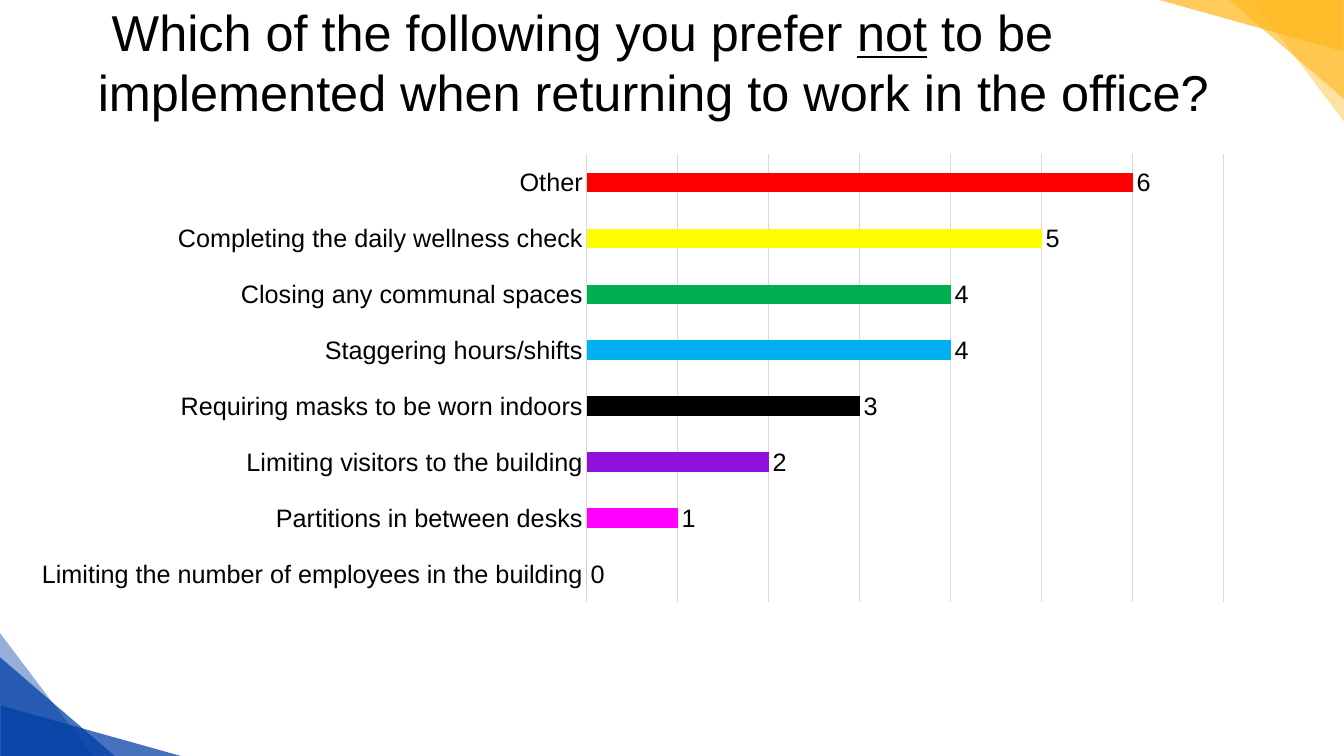
from lxml.etree import SubElement
from pptx import Presentation
from pptx.chart.data import CategoryChartData
from pptx.dml.color import RGBColor
from pptx.enum.chart import XL_CHART_TYPE, XL_LABEL_POSITION, XL_TICK_LABEL_POSITION, XL_TICK_MARK
from pptx.enum.shapes import MSO_SHAPE
from pptx.enum.text import MSO_AUTO_SIZE
from pptx.oxml import parse_xml
from pptx.oxml.ns import nsdecls, qn
from pptx.util import Inches, Pt

BLACK = RGBColor(0x00, 0x00, 0x00)
BLUE = RGBColor(0x00, 0x3D, 0xA5)
GOLD = RGBColor(0xFF, 0xB8, 0x1D)
GRID_GRAY = RGBColor(0xD9, 0xD9, 0xD9)
SERIES_BLUE = RGBColor(0x44, 0x72, 0xC4)
MAGENTA = RGBColor(0xFF, 0x00, 0xFF)
PURPLE = RGBColor(0x90, 0x13, 0xDD)
SKY = RGBColor(0x00, 0xB0, 0xF0)
GREEN = RGBColor(0x00, 0xB0, 0x50)
YELLOW = RGBColor(0xFF, 0xFF, 0x00)
RED = RGBColor(0xFF, 0x00, 0x00)

FONT = "Arial"

CORNER_TRIANGLES = [
    (0, 6.28, 0.92, 1.22, 0, BLUE, 41),
    (0, 6.52, 1.15, 0.99, 0, BLUE, 73),
    (12.42, 0, 0.92, 1.22, 180, GOLD, 41),
    (12.19, 0, 1.15, 0.99, 180, GOLD, 61),
    (0.01, 7, 1.82, 0.51, 0, BLUE, 73),
    (11.5, 0, 1.82, 0.51, 180, GOLD, 73),
]

TITLE_RUNS = [
    (" Which of the following you prefer ", False),
    ("not", True),
    (" to be implemented when returning to work in the office?", False),
]

ANSWERS = [
    ("Limiting the number of employees in the building", 0, SERIES_BLUE),
    ("Partitions in between desks", 1, MAGENTA),
    ("Limiting visitors to the building", 2, PURPLE),
    ("Requiring masks to be worn indoors", 3, BLACK),
    ("Staggering hours/shifts", 4, SKY),
    ("Closing any communal spaces", 4, GREEN),
    ("Completing the daily wellness check", 5, YELLOW),
    ("Other", 6, RED),
]


def style_font(font, size):
    font.name = FONT
    font.size = Pt(size)
    font.color.rgb = BLACK


def style_line(line):
    line.color.rgb = GRID_GRAY
    line.width = Pt(0.75)


def add_corner_triangle(slide, left, top, width, height, rotation, color, opacity):
    triangle = slide.shapes.add_shape(
        MSO_SHAPE.RIGHT_TRIANGLE, Inches(left), Inches(top), Inches(width), Inches(height)
    )
    triangle.rotation = rotation
    triangle.shadow.inherit = False
    triangle.line.fill.background()
    triangle.fill.solid()
    triangle.fill.fore_color.rgb = color
    color_element = triangle.fill._xPr.find(qn("a:solidFill"))[0]
    SubElement(color_element, qn("a:alpha")).set("val", str(opacity * 1000))


def add_title(slide):
    box = slide.shapes.add_textbox(Inches(0.97), Inches(0.01), Inches(11.93), Inches(1.21))
    frame = box.text_frame
    frame.word_wrap = True
    frame.auto_size = MSO_AUTO_SIZE.SHAPE_TO_FIT_TEXT
    frame.margin_left = frame.margin_right = frame.margin_top = frame.margin_bottom = 0
    paragraph = frame.paragraphs[0]
    style_font(paragraph.font, 36)
    for text, underlined in TITLE_RUNS:
        run = paragraph.add_run()
        run.text = text
        if underlined:
            run.font.underline = True


def set_plot_layout(chart, left, top, width, height):
    plot_area = chart._chartSpace.chart.plotArea
    for layout in plot_area.findall(qn("c:layout")):
        plot_area.remove(layout)
    plot_area.insert(0, parse_xml(
        f'<c:layout {nsdecls("c")}><c:manualLayout><c:layoutTarget val="inner"/>'
        '<c:xMode val="edge"/><c:yMode val="edge"/>'
        f'<c:x val="{left}"/><c:y val="{top}"/><c:w val="{width}"/><c:h val="{height}"/>'
        '</c:manualLayout></c:layout>'
    ))


def style_axes(chart):
    category_axis = chart.category_axis
    category_axis.major_tick_mark = XL_TICK_MARK.NONE
    category_axis.minor_tick_mark = XL_TICK_MARK.NONE
    category_axis.tick_label_position = XL_TICK_LABEL_POSITION.NEXT_TO_AXIS
    style_font(category_axis.tick_labels.font, 18)
    style_line(category_axis.format.line)
    value_axis = chart.value_axis
    value_axis.minimum_scale = 0
    value_axis.maximum_scale = 7
    value_axis.major_unit = 1
    value_axis.has_major_gridlines = True
    style_line(value_axis.major_gridlines.format.line)
    value_axis.visible = False


def style_bars(plot):
    plot.gap_width = 182
    plot.vary_by_categories = False
    series = plot.series[0]
    series.invert_if_negative = False
    series.format.fill.solid()
    series.format.fill.fore_color.rgb = SERIES_BLUE
    for index, (_, _, color) in enumerate(ANSWERS):
        if color != SERIES_BLUE:
            fill = series.points[index].format.fill
            fill.solid()
            fill.fore_color.rgb = color
    labels = series.data_labels
    labels.show_value = True
    labels.position = XL_LABEL_POSITION.OUTSIDE_END
    style_font(labels.font, 18)


def add_answer_chart(slide):
    data = CategoryChartData()
    data.categories = [answer for answer, _, _ in ANSWERS]
    data.add_series("Series 1", [votes for _, votes, _ in ANSWERS])
    chart = slide.shapes.add_chart(
        XL_CHART_TYPE.BAR_CLUSTERED, Inches(0.23), Inches(1.44), Inches(12.15), Inches(4.63), data
    ).chart
    chart.has_legend = False
    chart.has_title = False
    style_font(chart.font, 18)
    set_plot_layout(chart, 0.46, 0.02, 0.52, 0.96)
    style_axes(chart)
    style_bars(chart.plots[0])


def main():
    presentation = Presentation()
    presentation.slide_width = Inches(13.33)
    presentation.slide_height = Inches(7.5)
    slide = presentation.slides.add_slide(presentation.slide_layouts[6])
    for triangle in CORNER_TRIANGLES:
        add_corner_triangle(slide, *triangle)
    add_title(slide)
    add_answer_chart(slide)
    presentation.save("out.pptx")


if __name__ == "__main__":
    main()
